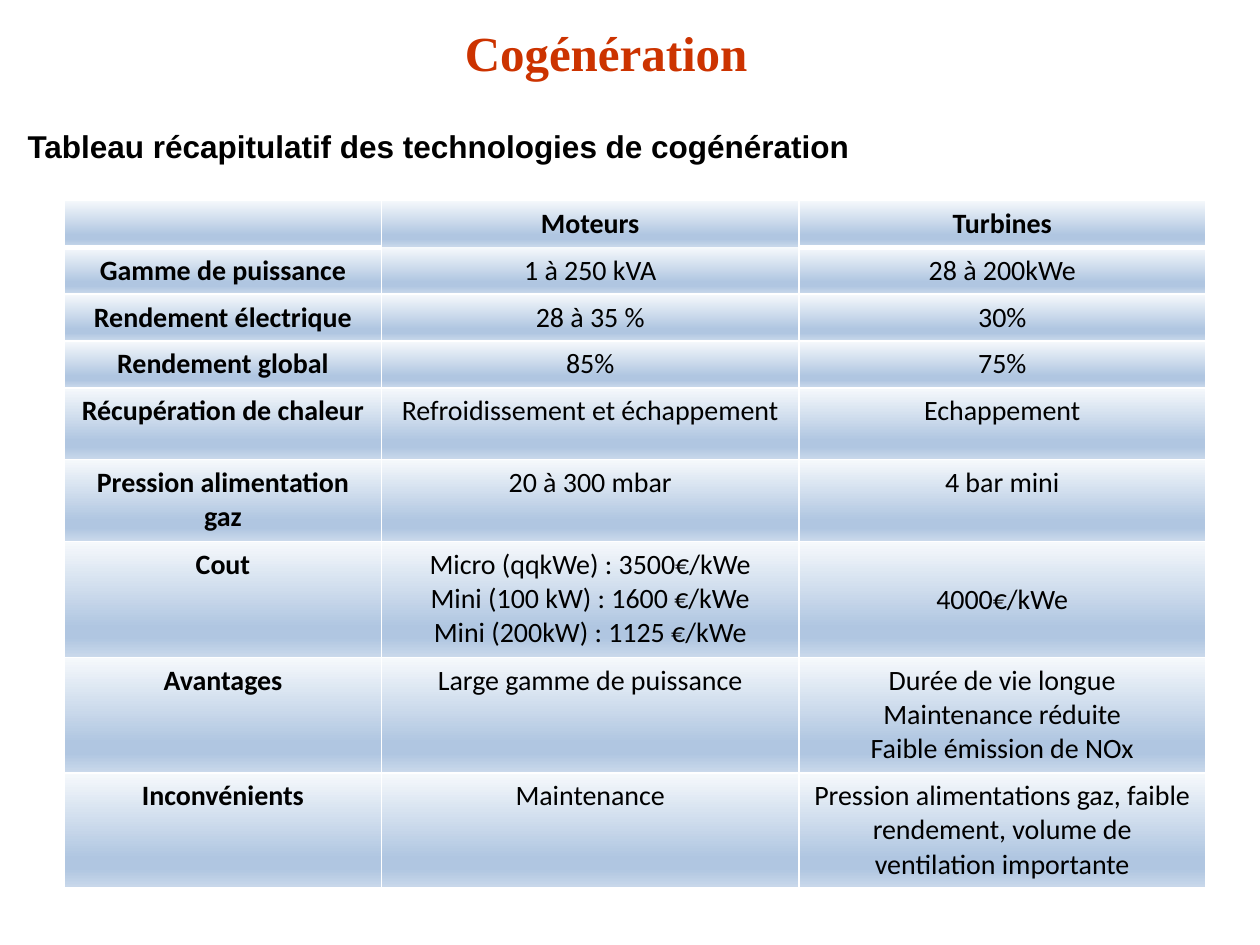
from dataclasses import dataclass
from typing import Optional

from lxml.etree import SubElement
from pptx import Presentation
from pptx.dml.color import RGBColor
from pptx.enum.text import MSO_ANCHOR, PP_ALIGN
from pptx.oxml.ns import qn
from pptx.util import Inches, Pt

COLORS = {
    "title": "CC3300",
    "text": "000000",
    "border": "FFFFFF",
    "light": "F6F9FC",
    "mid": "B0C6E1",
    "edge": "CAD9EB",
}
GRADIENT = ((0, "light"), (74, "mid"), (83, "mid"), (100, "edge"))
COLUMN_WIDTHS = (2.52, 3.31, 3.23)
TEXT_SIZE = 16


@dataclass
class Heading:
    text: str
    left: float
    top: float
    width: float
    height: float
    font: str
    size: int
    color: str
    align: PP_ALIGN
    wrap: bool


@dataclass
class Criterion:
    label: str
    engines: str
    turbines: str
    height: float = 0.37


HEADINGS = (
    Heading("Cogénération", 2.17, 0.13, 5.28, 0.57,
            "Times New Roman", 28, "title", PP_ALIGN.CENTER, True),
    Heading("Tableau récapitulatif des technologies de cogénération",
            0.12, 0.96, 6.79, 0.4, "Arial", 18, "text", PP_ALIGN.LEFT, False),
)
CRITERIA = (
    Criterion("", "Moteurs", "Turbines"),
    Criterion("Gamme de puissance", "1 à 250 kVA", "28 à 200kWe"),
    Criterion("Rendement électrique", "28 à 35 %", "30%"),
    Criterion("Rendement global", "85%", "75%"),
    Criterion("Récupération de chaleur", "Refroidissement et échappement",
              "Echappement", 0.57),
    Criterion("Pression alimentation gaz", "20 à 300 mbar", "4 bar mini", 0.65),
    Criterion("Cout",
              "Micro (qqkWe) : 3500€/kWe\n"
              "Mini (100 kW) : 1600 €/kWe\n"
              "Mini (200kW) : 1125 €/kWe",
              "4000€/kWe", 0.92),
    Criterion("Avantages", "Large gamme de puissance",
              "Durée de vie longue\nMaintenance réduite\nFaible émission de NOx",
              0.91),
    Criterion("Inconvénients", "Maintenance",
              "Pression alimentations gaz, faible rendement, "
              "volume de ventilation importante", 0.91),
)


def add_text(paragraph, text: str, font: str, size: int, color: str,
             bold: bool, align: PP_ALIGN) -> None:
    paragraph.alignment = align
    if not text:
        SubElement(paragraph._p, qn("a:endParaRPr"), sz=str(size * 100))
        return
    run = paragraph.add_run()
    run.text = text
    run.font.name = font
    run.font.size = Pt(size)
    run.font.bold = bold
    run.font.color.rgb = RGBColor.from_string(COLORS[color])


def add_heading(slide, heading: Heading) -> None:
    box = slide.shapes.add_textbox(
        Inches(heading.left), Inches(heading.top),
        Inches(heading.width), Inches(heading.height))
    box.text_frame.word_wrap = heading.wrap
    add_text(box.text_frame.paragraphs[0], heading.text, heading.font,
             heading.size, heading.color, True, heading.align)


def add_border(properties, side: str, width: Optional[float]) -> None:
    line = SubElement(properties, qn(f"a:ln{side}"), w=str(Pt(width or 0)))
    if width is None:
        SubElement(line, qn("a:noFill"))
        return
    fill = SubElement(line, qn("a:solidFill"))
    SubElement(fill, qn("a:srgbClr"), val=COLORS["border"])


def add_gradient(properties) -> None:
    gradient = SubElement(properties, qn("a:gradFill"), rotWithShape="1")
    stops = SubElement(gradient, qn("a:gsLst"))
    for percent, color in GRADIENT:
        stop = SubElement(stops, qn("a:gs"), pos=str(percent * 1000))
        SubElement(stop, qn("a:srgbClr"), val=COLORS[color])
    SubElement(gradient, qn("a:lin"), ang="5400000", scaled="0")


def fill_cell(cell, text: str, row: int, column: int) -> None:
    header_line = None if column == 1 else 3
    properties = cell._tc.get_or_add_tcPr()
    add_border(properties, "L", 1)
    add_border(properties, "R", 1)
    add_border(properties, "T", header_line if row == 1 else 1)
    add_border(properties, "B", header_line if row == 0 else 1)
    add_gradient(properties)
    frame = cell.text_frame
    for index, line in enumerate(text.split("\n")):
        paragraph = frame.add_paragraph() if index else frame.paragraphs[0]
        add_text(paragraph, line, "Calibri", TEXT_SIZE, "text",
                 row == 0 or column == 0, PP_ALIGN.CENTER)


def add_comparison(slide) -> None:
    table = slide.shapes.add_table(
        len(CRITERIA), len(COLUMN_WIDTHS), Inches(0.51), Inches(1.59),
        Inches(sum(COLUMN_WIDTHS)),
        Inches(sum(criterion.height for criterion in CRITERIA))).table
    table.horz_banding = False
    for column, width in zip(table.columns, COLUMN_WIDTHS):
        column.width = Inches(width)
    for row, criterion in enumerate(CRITERIA):
        table.rows[row].height = Inches(criterion.height)
        texts = (criterion.label, criterion.engines, criterion.turbines)
        for column, text in enumerate(texts):
            fill_cell(table.cell(row, column), text, row, column)
        if criterion.label == "Cout":
            table.cell(row, 2).vertical_anchor = MSO_ANCHOR.MIDDLE


def main() -> None:
    presentation = Presentation()
    presentation.slide_width = Inches(10)
    presentation.slide_height = Inches(7.5)
    slide = presentation.slides.add_slide(presentation.slide_layouts[6])
    add_comparison(slide)
    for heading in HEADINGS:
        add_heading(slide, heading)
    presentation.save("out.pptx")


if __name__ == "__main__":
    main()
